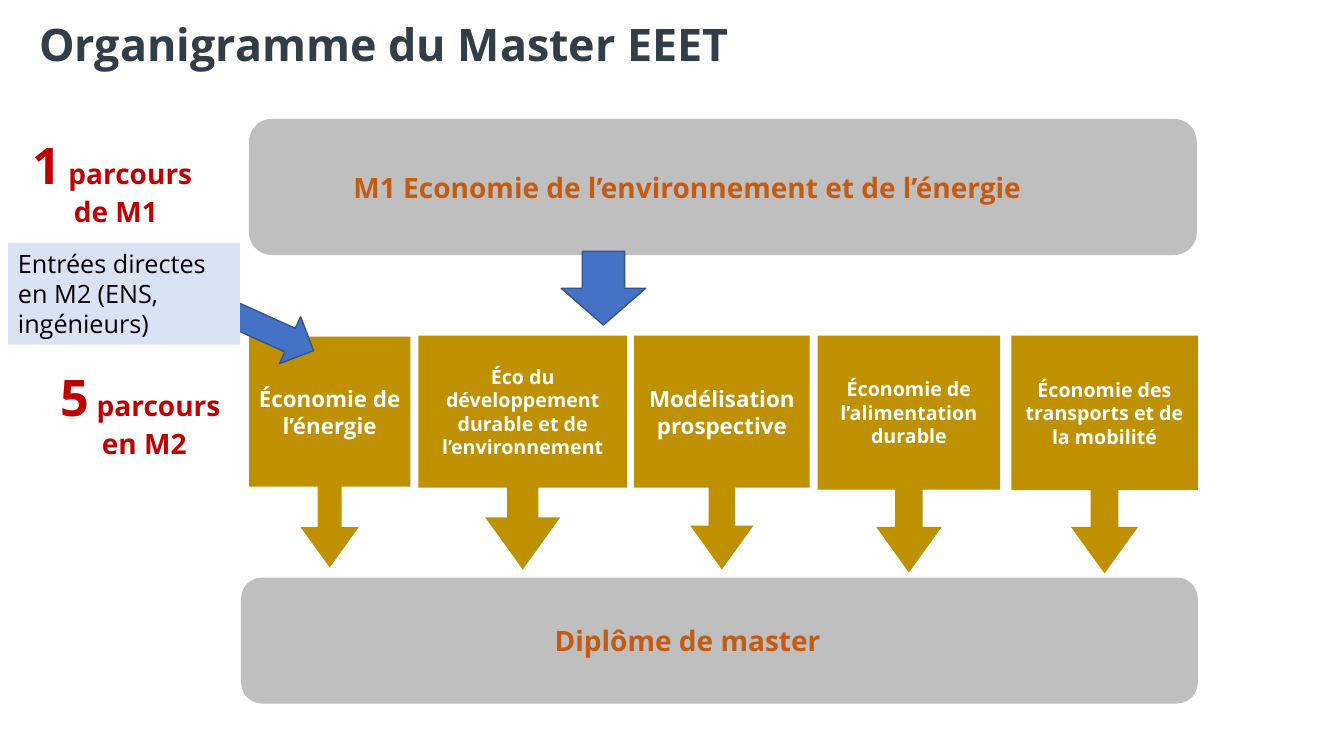
import dataclasses

import pptx
import pptx.dml.color
import pptx.enum.shapes
import pptx.enum.text
import pptx.util

PX = 9144
SHAPE = pptx.enum.shapes.MSO_SHAPE
ALIGN = pptx.enum.text.PP_ALIGN
ANCHOR = pptx.enum.text.MSO_ANCHOR
AUTOSIZE = pptx.enum.text.MSO_AUTO_SIZE


@dataclasses.dataclass(frozen=True)
class Theme:
    font: str = "Open Sans"
    title: str = "313E48"
    stage_fill: str = "BFBFBF"
    stage_text: str = "C55A11"
    track_fill: str = "BF9000"
    track_text: str = "FFFFFF"
    count: str = "C00000"
    arrow_fill: str = "4472C4"
    arrow_line: str = "325491"
    entry_fill: str = "DAE3F3"
    entry_text: str = "000000"
    title_size: int = 32
    count_size: int = 36
    label_size: int = 20
    entry_size: int = 18
    track_size: int = 16
    small_track_size: int = 14


THEME = Theme()


def color(value):
    return pptx.dml.color.RGBColor.from_string(value)


def place(*lengths):
    return [pptx.util.Emu(length * PX) for length in lengths]


def add_span(para, text, size, ink, bold=True):
    span = para.add_run()
    span.text = text
    span.font.name = THEME.font
    span.font.size = pptx.util.Pt(size)
    span.font.bold = bold
    span.font.color.rgb = color(ink)


def write(box, lines, ink, align=ALIGN.LEFT, anchor=ANCHOR.MIDDLE, bold=True):
    frame = box.text_frame
    frame.word_wrap = True
    frame.vertical_anchor = anchor
    for index, spans in enumerate(lines):
        para = frame.paragraphs[0] if index == 0 else frame.add_paragraph()
        para.alignment = align
        for text, size in spans:
            add_span(para, text, size, ink, bold)


def add_block(page, kind, bounds, fill):
    box = page.shapes.add_shape(kind, *place(*bounds))
    box.shadow.inherit = False
    box.fill.solid()
    box.fill.fore_color.rgb = color(fill)
    box.line.fill.background()
    return box


def add_title(page, text):
    box = page.shapes.title
    box.left, box.top, box.width, box.height = place(29, 9, 875, 75)
    write(box, [[(text, THEME.title_size)]], THEME.title)
    box.text_frame.auto_size = AUTOSIZE.NONE
    box.text_frame.paragraphs[0].line_spacing = 0.9


def add_stage(page, bounds, text, indent):
    box = add_block(page, SHAPE.ROUNDED_RECTANGLE, bounds, THEME.stage_fill)
    box.text_frame.margin_left = pptx.util.Emu(indent * PX)
    write(box, [[(text, THEME.label_size)]], THEME.stage_text)


def add_track(page, bounds, size, *lines):
    box = add_block(page, SHAPE.DOWN_ARROW_CALLOUT, bounds, THEME.track_fill)
    for index, value in enumerate((0.15, 0.18, 0.25, 0.65)):
        box.adjustments[index] = value
    write(box, [[(line, size)] for line in lines], THEME.track_text, ALIGN.CENTER)


def add_count(page, left, top, number, level):
    box = page.shapes.add_textbox(*place(left, top, 232, 139))
    lines = [
        [(number, THEME.count_size), (" parcours ", THEME.label_size)],
        [(level, THEME.label_size)],
    ]
    write(box, lines, THEME.count, ALIGN.CENTER)


def add_arrow(page, bounds, rotation):
    arrow = add_block(page, SHAPE.RIGHT_ARROW, bounds, THEME.arrow_fill)
    arrow.line.color.rgb = color(THEME.arrow_line)
    arrow.line.width = pptx.util.Pt(1)
    arrow.rotation = rotation


def add_entry(page, bounds, text):
    box = add_block(page, SHAPE.RECTANGLE, bounds, THEME.entry_fill)
    write(box, [[(text, THEME.entry_size)]], THEME.entry_text, anchor=ANCHOR.TOP, bold=False)
    box.text_frame.auto_size = AUTOSIZE.SHAPE_TO_FIT_TEXT


def main():
    deck = pptx.Presentation()
    deck.slide_width, deck.slide_height = place(1333, 750)
    page = deck.slides.add_slide(deck.slide_layouts[5])
    large, small = THEME.track_size, THEME.small_track_size

    add_title(page, "Organigramme du Master EEET")
    add_stage(page, (247, 118, 940, 135), "M1 Economie de l’environnement et de l’énergie", 97)
    add_track(page, (247, 334, 160, 229), large, "Économie de l’énergie")
    add_track(page, (415, 333, 207, 232), small, "Éco du développement durable et de l’environnement")
    add_track(page, (629, 333, 174, 232), large, "Modélisation", "prospective")
    add_track(page, (811, 333, 181, 235), small, "Économie de l’alimentation durable")
    add_track(page, (1003, 333, 185, 236), small, "Économie des transports et de la mobilité")
    add_count(page, -1, 110, "1", "de M1")
    add_count(page, 27, 340, "5", "en M2")
    add_stage(page, (239, 573, 949, 125), "Diplôme de master", 305)
    add_arrow(page, (202, 299, 114, 51), 24.3)
    add_entry(page, (8, 241, 230, 101), "Entrées directes en M2 (ENS, ingénieurs)")
    add_arrow(page, (562, 244, 73, 84), 90)
    deck.save("out.pptx")


if __name__ == "__main__":
    main()
